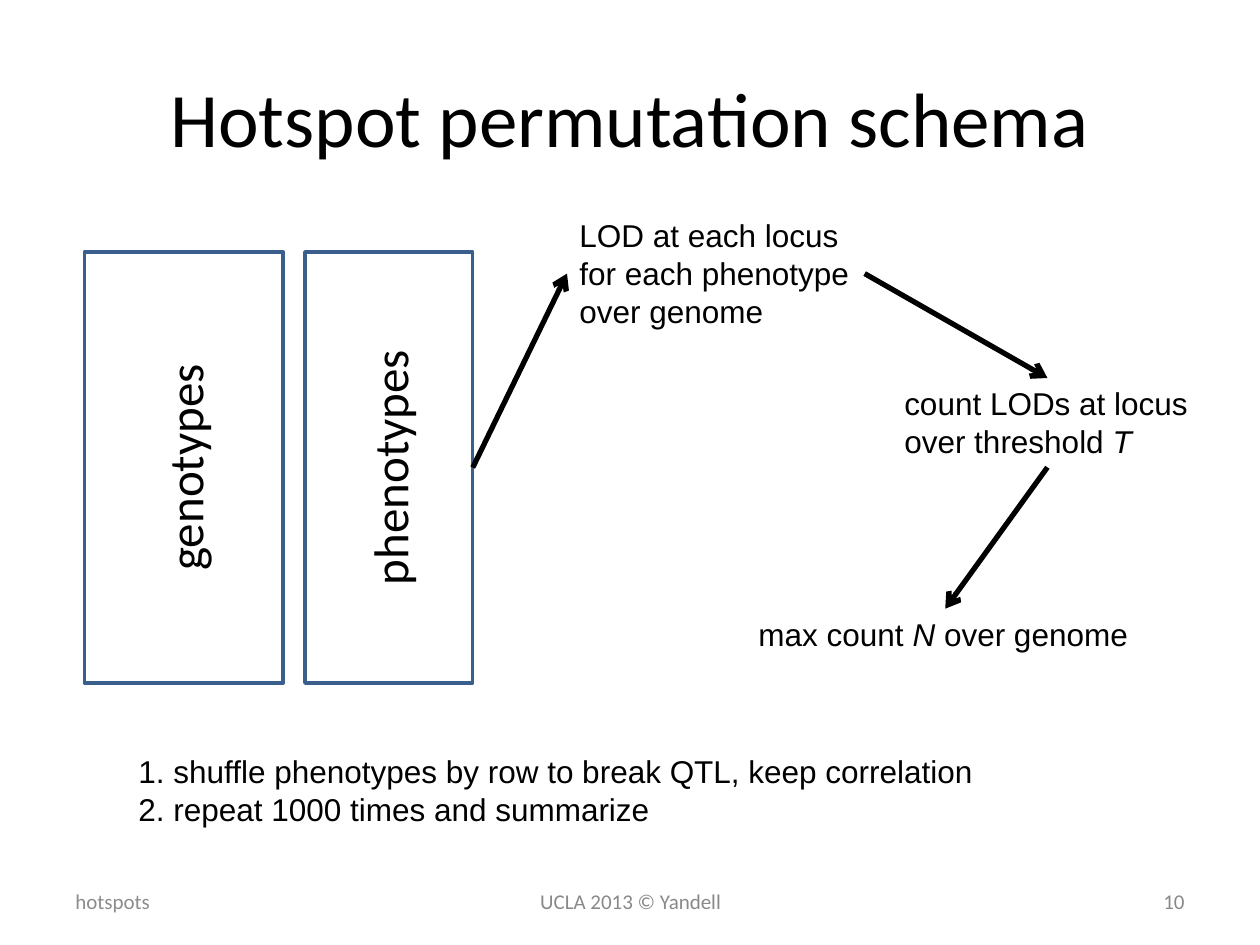
from lxml import etree
from pptx import Presentation, util as u
from pptx.dml.color import RGBColor
from pptx.enum import shapes, text
from pptx.oxml import ns

# Theme
THEME = {
    "ink": "000000", "edge": "3A5F8C", "grey": "898989", "dim": "8C8C8C",
    "head": "Calibri", "body": "Arial",
    "title": 44, "label": 28, "note": 18, "foot": 12,
    "frame": 2, "arrow": 3,
}
LEFT, MID, RIGHT = text.PP_ALIGN.LEFT, text.PP_ALIGN.CENTER, text.PP_ALIGN.RIGHT

# Content: each note is a list of lines, each line a list of (text, italic) runs
TITLE = "Hotspot permutation schema"
PANELS = [("genotypes", 4.01), ("phenotypes", 3.38)]
NOTES = {
    "lod": ((11.43, 4.23, 6, 2.57), False, [
        [("LOD at each locus", False)],
        [("for each phenotype", False)],
        [("over genome", False)]]),
    "count": ((17.98, 7.62, 6.27, 1.8), False, [
        [("count LODs at locus", False)],
        [("over threshold ", False), ("T", True)]]),
    "max": ((15.04, 12.27, 8.03, 1.02), False, [
        [("max count ", False), ("N", True), (" over genome", False)]]),
    "steps": ((2.54, 15.04, 18.85, 1.8), True, [
        [("1. shuffle phenotypes by row to break QTL, keep correlation", False)],
        [("2. repeat 1000 times and summarize", False)]]),
}
# Arrows: from, side, to, side (0 top, 1 left, 2 bottom, 3 right)
ARROWS = [("phenotypes", 3, "lod", 1), ("lod", 3, "count", 0), ("count", 2, "max", 0)]
FOOT = [("hotspots", 1.27, 5.93, LEFT, "dim"),
        ("UCLA 2013 © Yandell", 8.69, 8.05, MID, "grey"),
        ("10", 18.21, 5.92, RIGHT, "grey")]


def color(key):
    return RGBColor.from_string(THEME[key])


def write(shape, lines, size, font, ink="ink", align=LEFT, anchor=text.MSO_ANCHOR.MIDDLE):
    frame = shape.text_frame
    frame.word_wrap = True
    frame.vertical_anchor = anchor
    for i, line in enumerate(lines):
        para = frame.add_paragraph() if i else frame.paragraphs[0]
        para.alignment = align
        for words, slant in line:
            run = para.add_run()
            run.text = words
            run.font.size = u.Pt(THEME[size])
            run.font.name = THEME[font]
            run.font.italic = slant
            run.font.color.rgb = color(ink)
    return frame


def place(slide, box):
    return slide.shapes.add_textbox(*map(u.Cm, box))


def panel(slide, label, left, width, top=5.08, height=8.69):
    rect = slide.shapes.add_shape(
        shapes.MSO_SHAPE.RECTANGLE, *map(u.Cm, (left, top, width, height)))
    rect.shadow.inherit = False
    rect.fill.background()
    rect.line.color.rgb = color("edge")
    rect.line.width = u.Pt(THEME["frame"])
    write(rect, [[(label, False)]], "label", "head", align=MID)
    rect.text_frame._txBody.bodyPr.set("vert", "vert270")
    return rect


def arrow(slide, start, out, end, into):
    line = slide.shapes.add_connector(shapes.MSO_CONNECTOR.STRAIGHT, 0, 0, 0, 0)
    line.begin_connect(start, out)
    line.end_connect(end, into)
    line.line.color.rgb = color("ink")
    line.line.width = u.Pt(THEME["arrow"])
    etree.SubElement(line.line._get_or_add_ln(), ns.qn("a:tailEnd"), type="arrow")
    etree.SubElement(line._element.spPr, ns.qn("a:effectLst"))


def main():
    deck = Presentation()
    deck.slide_width, deck.slide_height = u.Cm(25.4), u.Cm(19.05)
    slide = deck.slides.add_slide(deck.slide_layouts[6])
    parts = {}

    # Title
    write(place(slide, (1.27, 0.76, 22.86, 3.18)), [[(TITLE, False)]],
          "title", "head", align=MID)

    # Data panels, side by side
    left, gap = 1.7, 0.44
    for label, width in PANELS:
        parts[label] = panel(slide, label, left, width)
        left += width + gap

    # Notes
    for name, (box, wrap, lines) in NOTES.items():
        parts[name] = place(slide, box)
        frame = write(parts[name], lines, "note", "body", anchor=text.MSO_ANCHOR.TOP)
        frame.word_wrap = wrap
        frame.auto_size = text.MSO_AUTO_SIZE.SHAPE_TO_FIT_TEXT

    # Flow arrows
    for start, out, end, into in ARROWS:
        arrow(slide, parts[start], out, parts[end], into)

    # Footer
    for words, left, width, align, ink in FOOT:
        write(place(slide, (left, 17.65, width, 1.02)), [[(words, False)]],
              "foot", "head", ink, align)

    deck.save("out.pptx")


if __name__ == "__main__":
    main()
